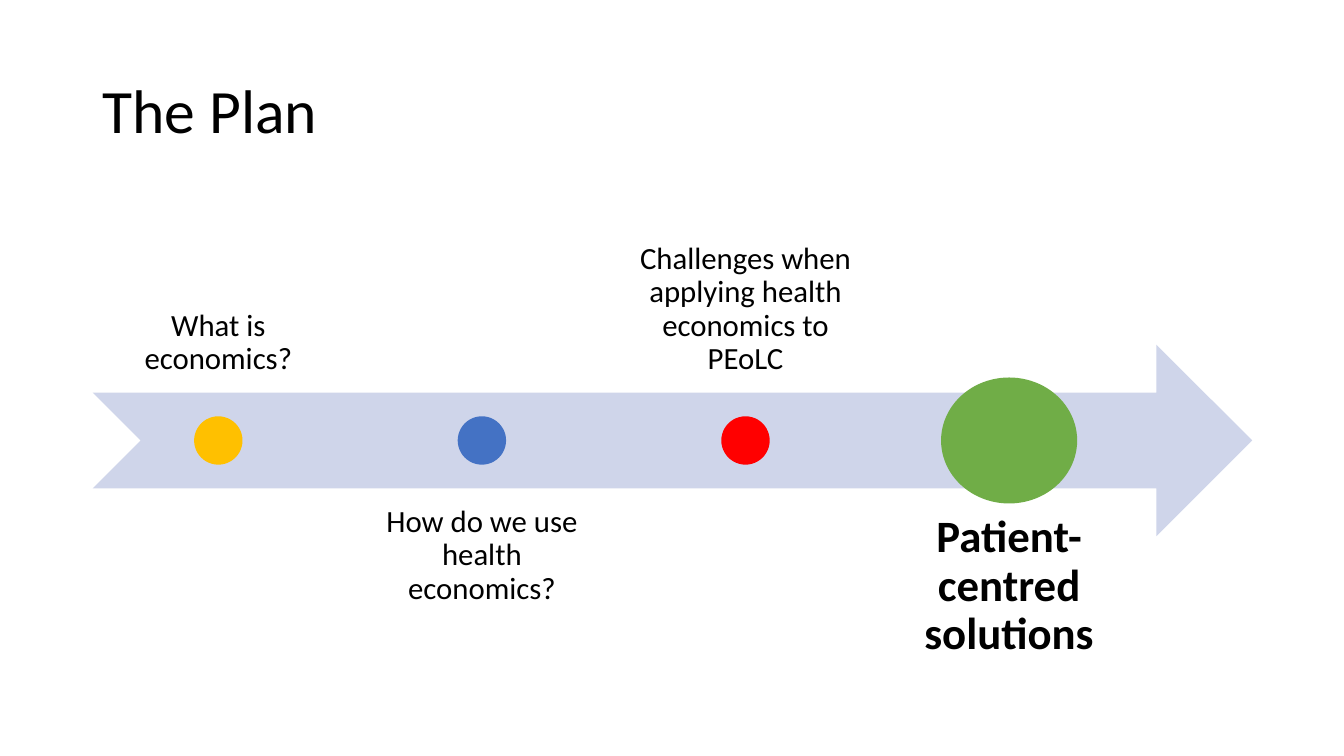
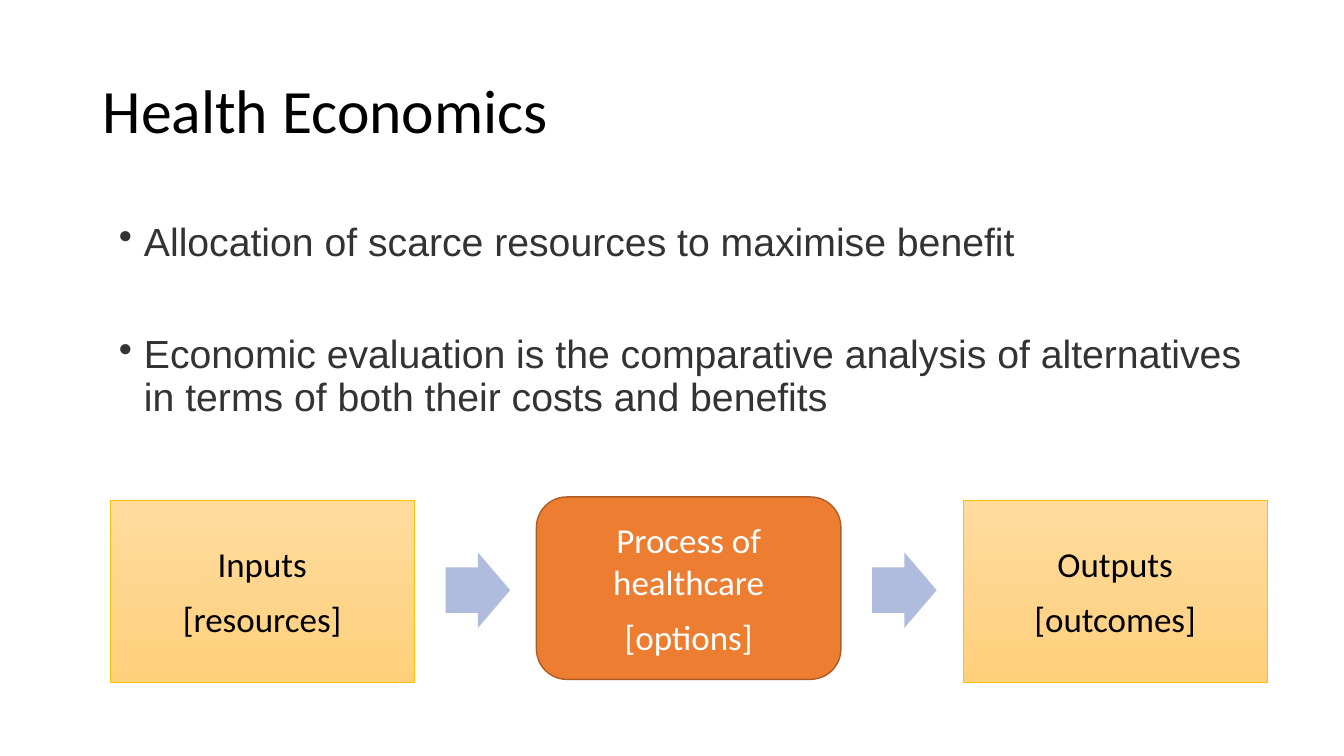
from lxml import etree
from pptx import Presentation
from pptx.dml.color import RGBColor
from pptx.enum.shapes import MSO_SHAPE
from pptx.enum.text import MSO_ANCHOR, PP_ALIGN
from pptx.oxml.ns import qn
from pptx.util import Inches, Pt

TOP, MIDDLE, BOTTOM = MSO_ANCHOR.TOP, MSO_ANCHOR.MIDDLE, MSO_ANCHOR.BOTTOM
LEFT, CENTER = PP_ALIGN.LEFT, PP_ALIGN.CENTER
NOTCHED_ARROW, ARROW = MSO_SHAPE.NOTCHED_RIGHT_ARROW, MSO_SHAPE.RIGHT_ARROW
OVAL, PROCESS = MSO_SHAPE.OVAL, MSO_SHAPE.FLOWCHART_PROCESS
ROUNDED = MSO_SHAPE.FLOWCHART_ALTERNATE_PROCESS

COLORS = {
    "black": "000000", "white": "FFFFFF", "body": "333333",
    "timeline": "CFD5EA", "flow_arrow": "B0BCDE",
    "gold": "FFC000", "blue": "4472C4", "red": "FF0000", "green": "70AD47",
    "orange": "ED7D31", "orange_edge": "AF5C24",
    "sand_light": "FFDB9E", "sand_dark": "FFD07C",
}
RGB = {name: RGBColor.from_string(value) for name, value in COLORS.items()}

# Text formats: font, paragraph and frame attributes
TITLE = {"font": {"name": "Calibri", "size": Pt(44)}, "color": "black",
         "paragraph": {"alignment": LEFT, "line_spacing": 0.9},
         "frame": {"vertical_anchor": MIDDLE}}
STEP = {"font": {"name": "Calibri", "size": Pt(22)}, "color": "black", "inset": 0.17,
        "paragraph": {"alignment": CENTER, "line_spacing": 0.9}}
GOAL = {**STEP, "font": {"name": "Calibri", "size": Pt(32), "bold": True}, "inset": 0.25}
STAGE = {"font": {"name": "Calibri", "size": Pt(25)}, "inset": 0.1, "gap": 9,
         "paragraph": {"alignment": CENTER}, "frame": {"vertical_anchor": MIDDLE}}
BULLETS = {"font": {"name": "Arial", "size": Pt(28)}, "color": "body", "gap": 50,
           "bullet": "•", "paragraph": {"alignment": LEFT, "line_spacing": 0.9}}

deck = Presentation()
deck.slide_width, deck.slide_height = Inches(13.33), Inches(7.5)
MARGIN, CONTENT_W = 0.92, 11.5


def add_text(holder, paragraphs, style):
    """Fill a shape or text box with paragraphs in one format."""
    frame = holder.text_frame
    frame.word_wrap = True
    for key, value in style.get("frame", {}).items():
        setattr(frame, key, value)
    if "inset" in style:
        for side in ("left", "top", "right", "bottom"):
            setattr(frame, f"margin_{side}", Inches(style["inset"]))
    for index, words in enumerate(paragraphs):
        paragraph = frame.add_paragraph() if index else frame.paragraphs[0]
        paragraph.text = words
        if "bullet" in style:
            props = paragraph._p.get_or_add_pPr()
            props.set("marL", str(Inches(0.25)))
            props.set("indent", str(Inches(-0.25)))
            etree.SubElement(props, qn("a:buChar")).set("char", style["bullet"])
        for key, value in style["paragraph"].items():
            setattr(paragraph, key, value)
        if index:
            paragraph.space_before = Pt(style["gap"])
        font = paragraph.runs[0].font
        for key, value in style["font"].items():
            setattr(font, key, value)
        font.color.rgb = RGB[style["color"]]


def add_figure(slide, kind, box, fill, edge=None, edge_width=1):
    """Draw a preset shape; a pair of fill colours makes a vertical gradient."""
    figure = slide.shapes.add_shape(kind, *map(Inches, box))
    figure.shadow.inherit = False
    if isinstance(fill, tuple):
        figure.fill.gradient()
        figure.fill.gradient_angle = 270
        for stop, name in zip(figure.fill.gradient_stops, fill):
            stop.color.rgb = RGB[name]
    else:
        figure.fill.solid()
        figure.fill.fore_color.rgb = RGB[fill]
    if edge:
        figure.line.color.rgb = RGB[edge]
        figure.line.width = Pt(edge_width)
    else:
        figure.line.fill.background()
    return figure


# Both slides with their titles
slides = []
for heading in ("The Plan", "Health Economics"):
    slide = deck.slides.add_slide(deck.slide_layouts[6])
    title = slide.shapes.add_textbox(*map(Inches, (MARGIN, 0.4, CONTENT_W, 1.45)))
    add_text(title, [heading], TITLE)
    slides.append(slide)
plan, economics = slides

# Plan: timeline arrow, four columns with labels above and below in turn
BAND_TOP, BAND_H = 3.42, 1.9
BAND_MIDDLE = BAND_TOP + BAND_H / 2
COLUMN_W = 2.49
COLUMN_STEP = COLUMN_W * 1.05
add_figure(plan, NOTCHED_ARROW, (MARGIN, BAND_TOP, CONTENT_W, BAND_H), "timeline")
steps = [
    ("What is economics?", "gold", 0.48, 0.48, STEP),
    ("How do we use health economics?", "blue", 0.48, 0.48, STEP),
    ("Challenges when applying health economics to PEoLC", "red", 0.48, 0.48, STEP),
    ("Patient-centred solutions", "green", 1.35, 1.25, GOAL),
]
for column, (words, color, dot_w, dot_h, style) in enumerate(steps):
    left = MARGIN + column * COLUMN_STEP
    below = column % 2 == 1
    label_top = 4.85 if below else 2
    label = plan.shapes.add_textbox(*map(Inches, (left, label_top, COLUMN_W, BAND_H)))
    anchor = TOP if below else BOTTOM
    add_text(label, [words], {**style, "frame": {"vertical_anchor": anchor}})
    dot_left = left + (COLUMN_W - dot_w) / 2
    add_figure(plan, OVAL, (dot_left, BAND_MIDDLE - dot_h / 2, dot_w, dot_h), color)

# Health economics: definitions
definitions = economics.shapes.add_textbox(*map(Inches, (1.08, 2.16, CONTENT_W, 2.5)))
add_text(definitions, [
    "Allocation of scarce resources to maximise benefit",
    "Economic evaluation is the comparative analysis of alternatives in terms of "
    "both their costs and benefits",
], BULLETS)

# Health economics: three stages joined by arrows
STAGE_LEFT, STAGE_W, STAGE_H, STAGE_STEP = 1.09, 3.02, 1.81, 4.23
ARROW_W, ARROW_H = 0.64, 0.75
SAND = ("sand_light", "sand_dark")
stages = [
    (["Inputs", "[resources]"], PROCESS, 4.96, SAND, "gold", 0.5, "black"),
    (["Process of healthcare", "[options]"], ROUNDED, 4.93, "orange", "orange_edge", 1, "white"),
    (["Outputs", "[outcomes]"], PROCESS, 4.96, SAND, "gold", 0.5, "black"),
]
for column, (words, kind, top, fill, edge, edge_width, ink) in enumerate(stages):
    left = STAGE_LEFT + column * STAGE_STEP
    stage = add_figure(economics, kind, (left, top, STAGE_W, STAGE_H), fill, edge, edge_width)
    add_text(stage, words, {**STAGE, "color": ink})
    if column < len(stages) - 1:
        arrow = add_figure(economics, ARROW,
                           (left + STAGE_W + 0.31, 5.48, ARROW_W, ARROW_H), "flow_arrow")
        arrow.adjustments[0] = 0.6

deck.save("out.pptx")
